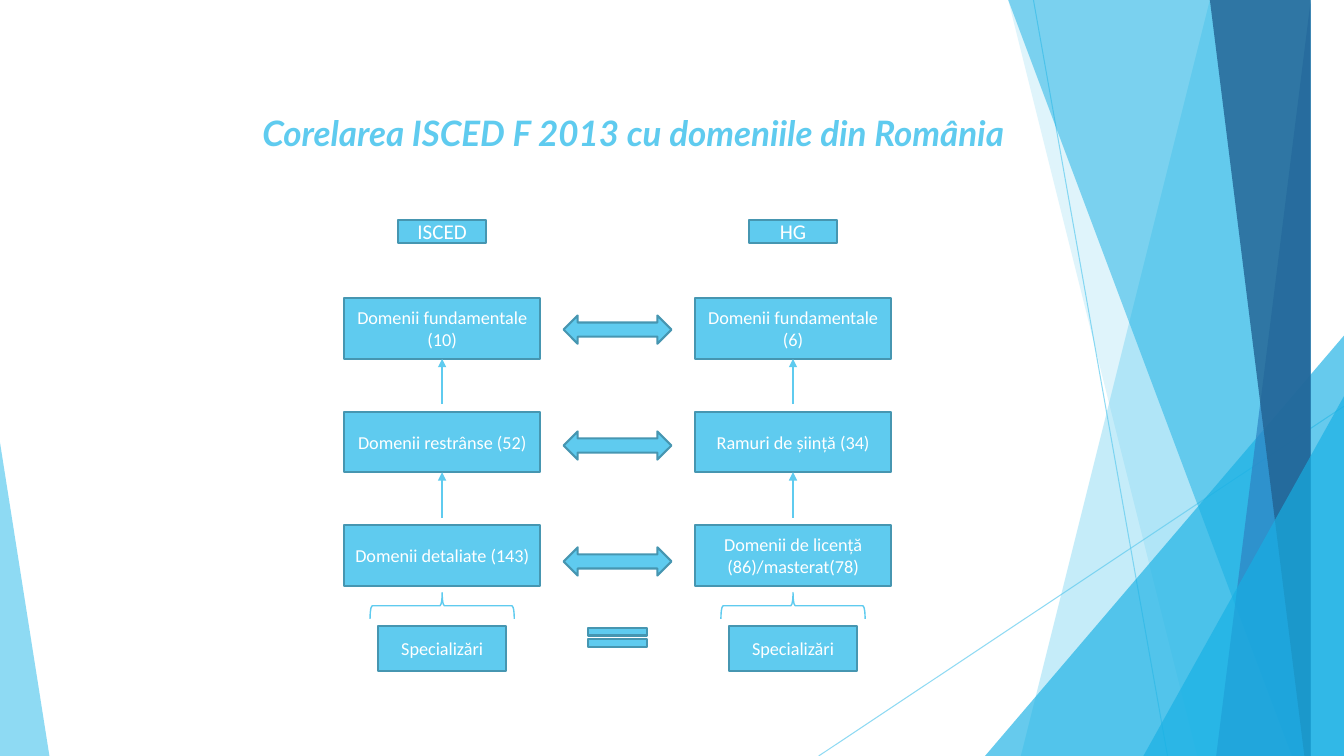
from pptx import Presentation
from pptx import util as u
from pptx.dml.color import RGBColor
from pptx.enum import shapes, text
from pptx.oxml.ns import qn
from lxml import etree

SKY = RGBColor(0x5F, 0xCB, 0xEF)
CYAN = RGBColor(0x17, 0xB0, 0xE4)
BLUE = RGBColor(0x2E, 0x83, 0xC3)
NAVY = RGBColor(0x22, 0x62, 0x92)
EDGE = RGBColor(0x46, 0x96, 0xB1)
WHITE = RGBColor(0xFF, 0xFF, 0xFF)
WIDTH, HEIGHT = 13.33, 7.5
SHAPE = shapes.MSO_SHAPE

COLUMNS = [
    ("ISCED", ["Domenii fundamentale (10)", "Domenii restrânse (52)",
               "Domenii detaliate (143)"]),
    ("HG", ["Domenii fundamentale (6)", "Ramuri de șiință (34)",
            "Domenii de licență (86)/masterat(78)"]),
]


def set_opacity(element, percent):
    """Make the solid colour inside an element partly transparent."""
    color = next(element.iter(qn("a:srgbClr")))
    etree.SubElement(color, qn("a:alpha"), val=str(percent * 1000))


def add_line(slide, start, end, width, opacity=100, arrow=False):
    """Draw a straight sky-blue line, with an arrowhead at its end if asked."""
    cxn = slide.shapes.add_connector(
        shapes.MSO_CONNECTOR.STRAIGHT, *map(u.Inches, start + end))
    cxn.line.color.rgb = SKY
    cxn.line.width = u.Pt(width)
    pr = cxn._element.spPr
    etree.SubElement(pr, qn("a:effectLst"))
    ln = pr.find(qn("a:ln"))
    if opacity < 100:
        set_opacity(ln, opacity)
    if arrow:
        etree.SubElement(ln, qn("a:tailEnd"), type="triangle")


def add_block(slide, kind, left, top, width, height, label="", size=13):
    """Draw a filled, outlined shape with an optional centred label."""
    sp = slide.shapes.add_shape(
        kind, *map(u.Inches, (left, top, width, height)))
    sp.shadow.inherit = False
    sp.fill.solid()
    sp.fill.fore_color.rgb = SKY
    sp.line.color.rgb = EDGE
    sp.line.width = u.Pt(1.5)
    if label:
        tf = sp.text_frame
        tf.word_wrap = True
        tf.vertical_anchor = text.MSO_ANCHOR.MIDDLE
        p = tf.paragraphs[0]
        p.text = label
        p.alignment = text.PP_ALIGN.CENTER
        p.font.name, p.font.size = "Calibri", u.Pt(size)
        p.font.color.rgb = WHITE


def tint(sp, color, opacity):
    """Give a decorative shape a translucent fill and no outline."""
    sp.shadow.inherit = False
    sp.fill.solid()
    sp.fill.fore_color.rgb = color
    sp.line.fill.background()
    set_opacity(sp._element.spPr, opacity)


def add_slant(slide, top_x, bottom_x, color, opacity):
    """Fill the area from a slanted edge to the right side of the slide."""
    builder = slide.shapes.build_freeform(top_x, 0, scale=u.Inches(1))
    builder.add_line_segments(
        [(WIDTH, 0), (WIDTH, HEIGHT), (bottom_x, HEIGHT)], close=True)
    tint(builder.convert_to_shape(), color, opacity)


def add_corner(slide, left, width, height, apex, color, opacity):
    """Stand a triangle on the bottom edge with its tip at the given share."""
    sp = slide.shapes.add_shape(
        SHAPE.ISOSCELES_TRIANGLE,
        *map(u.Inches, (left, HEIGHT - height, width, height)))
    sp.adjustments[0] = apex
    tint(sp, color, opacity)


def add_backdrop(slide):
    """Draw the overlapping facets along the slide edges."""
    add_line(slide, (10.25, 0), (11.58, HEIGHT), 0.75, opacity=70)
    add_line(slide, (WIDTH, 4.03), (8.12, HEIGHT), 0.75, opacity=70)
    add_slant(slide, 12.28, 10.04, SKY, 36)
    add_slant(slide, 10.5, 11.83, SKY, 20)
    add_corner(slide, 9.77, 3.56, 4.17, 1, CYAN, 66)
    add_slant(slide, 10.21, 12.91, CYAN, 50)
    add_slant(slide, 13.03, 11.92, BLUE, 70)
    add_slant(slide, 11.96, 13.18, NAVY, 80)
    add_corner(slide, 11.34, 1.99, 3.57, 1, CYAN, 66)
    add_corner(slide, 0, 0.49, 3.11, 0, SKY, 70)


def add_title(slide, left, top, width, height):
    """Format the title placeholder and bring it in front of the backdrop."""
    sp = slide.shapes.title
    sp.left, sp.top, sp.width, sp.height = map(
        u.Inches, (left, top, width, height))
    tf = sp.text_frame
    tf.word_wrap = True
    tf.auto_size = text.MSO_AUTO_SIZE.NONE
    tf.vertical_anchor = text.MSO_ANCHOR.TOP
    p = tf.paragraphs[0]
    p.text = "Corelarea ISCED F 2013 cu domeniile din România"
    p.alignment = text.PP_ALIGN.CENTER
    p.font.name, p.font.size = "Lato", u.Pt(25)
    p.font.bold = p.font.italic = True
    p.font.color.rgb = SKY
    slide.shapes._spTree.append(sp._element)


def add_brace(slide, center, middle, width, height):
    """Draw an upward-pointing brace around a centre point."""
    sp = slide.shapes.add_shape(
        SHAPE.LEFT_BRACE,
        *map(u.Inches, (center - height / 2, middle - width / 2,
                        height, width)))
    sp.rotation = 90
    sp.shadow.inherit = False
    sp.fill.background()
    sp.line.color.rgb = SKY
    sp.line.width = u.Pt(1)


def add_column(slide, left, top, width, heading, levels):
    """Stack a heading, linked levels, a brace and the specialisations."""
    center, height, pitch = left + width / 2, 0.6, 1.125
    add_block(slide, SHAPE.RECTANGLE, center - 0.44, top, 0.88, 0.23,
              heading, 15)
    first = top + 0.78
    for i, label in enumerate(levels):
        y = first + i * pitch
        add_block(slide, SHAPE.RECTANGLE, left, y, width, height, label)
        if i:
            tip = y - pitch + height
            add_line(slide, (center, tip + 0.45), (center, tip), 1, arrow=True)
    add_brace(slide, center, top + 3.83, 1.43, 0.26)
    add_block(slide, SHAPE.RECTANGLE, center - 0.635, top + 4.03, 1.27, 0.45,
              "Specializări")


def add_links(slide, left, top, width):
    """Place the two-way arrows and the equals sign between the columns."""
    for i in range(3):
        add_block(slide, SHAPE.LEFT_RIGHT_ARROW, left, top + i * 1.15,
                  width, 0.28)
    add_block(slide, SHAPE.MATH_EQUAL, left + width / 2 - 0.4, top + 3.03,
              0.8, 0.33)


def main():
    """Build and save the slide."""
    prs = Presentation()
    prs.slide_width, prs.slide_height = u.Inches(WIDTH), u.Inches(HEIGHT)
    slide = prs.slides.add_slide(prs.slide_layouts[5])
    add_backdrop(slide)
    add_title(slide, 0.53, 1.06, 11.5, 1.45)
    for i, (heading, levels) in enumerate(COLUMNS):
        add_column(slide, 3.41 + i * 3.48, 2.18, 1.95, heading, levels)
    add_links(slide, 5.59, 3.13, 1.07)
    prs.save("out.pptx")


if __name__ == "__main__":
    main()
